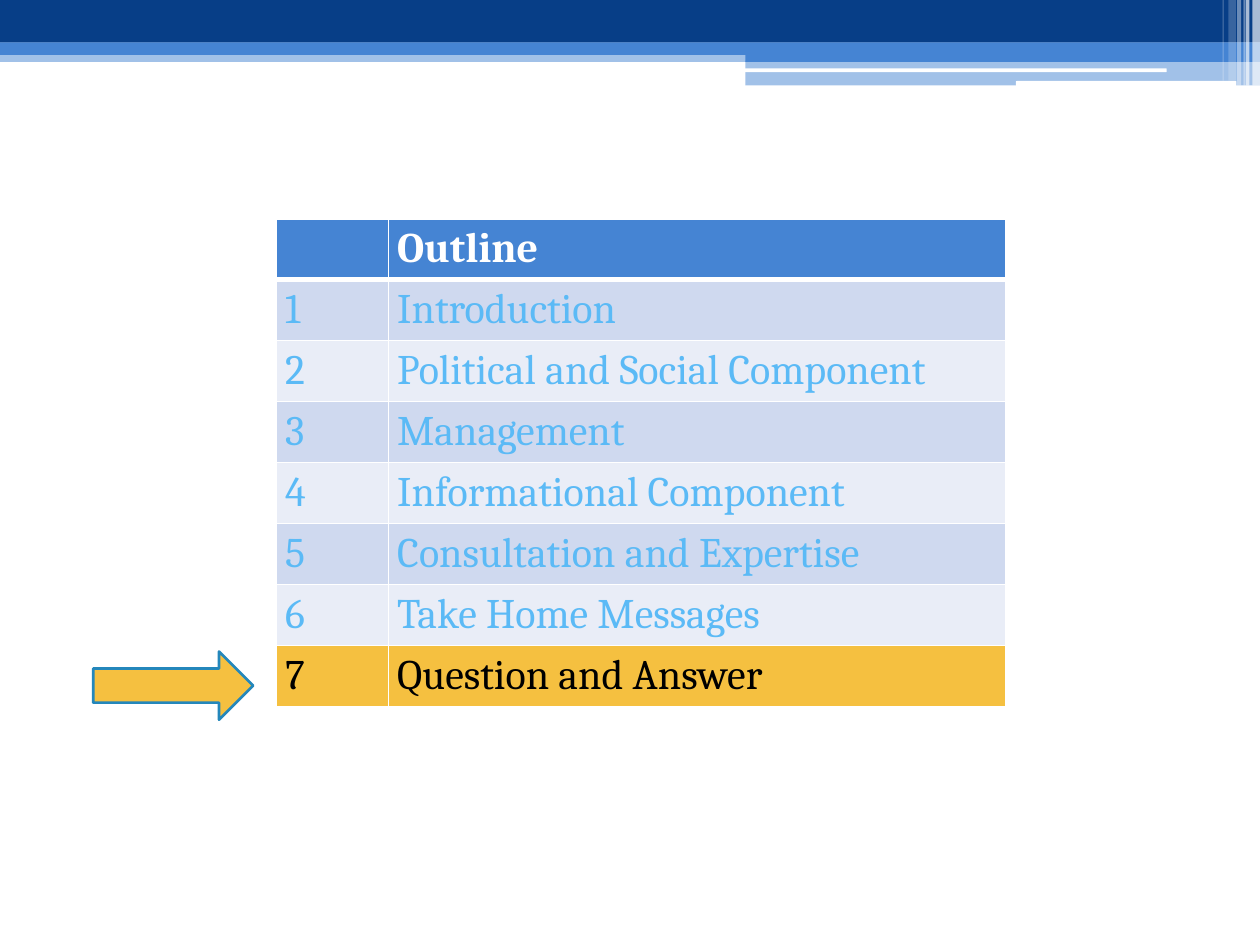
from lxml import etree
from pptx import Presentation
from pptx.dml.color import RGBColor
from pptx.enum.shapes import MSO_SHAPE
from pptx.oxml.ns import qn
from pptx.util import Pt

RECT = MSO_SHAPE.RECTANGLE
ROUND = MSO_SHAPE.ROUNDED_RECTANGLE
ARROW = MSO_SHAPE.RIGHT_ARROW

COLORS = {
    "navy": "073E87", "blue": "4584D3", "white": "FFFFFF", "black": "000000",
    "sky": "5BBAF6", "band_dark": "CFD9EF", "band_light": "E9EDF7",
    "gold": "F5C040", "edge": "2487BB",
}

# Content
HEADING = "Outline"
TOPICS = [
    "Introduction",
    "Political and Social Component",
    "Management",
    "Informational Component",
    "Consultation and Expertise",
    "Take Home Messages",
    "Question and Answer",
]
CURRENT = 7

# Banner parts: shape, left, top, width, height, colour, opacity in percent
BANNER = [
    (RECT, 0, 28.8, 720, 6.6, "blue", 50),
    (RECT, 0, 0, 720, 24.4, "navy", 100),
    (RECT, 0, 24.2, 720, 7.2, "blue", 100),
    (RECT, 426, 28.2, 294, 7.2, "blue", 100),
    (RECT, 426, 34.6, 294, 14.2, "blue", 50),
    (ROUND, 425.5, 39.1, 241.2, 2.16, "white", 100),
    (ROUND, 580.5, 46.3, 126, 2.88, "white", 100),
]
# Stripes at the right end: left, width, height, opacity in percent
STRIPES = [
    (715.7, 4.3, 49, 65),
    (711.8, 2.2, 49, 65),
    (710.6, 0.7, 49, 60),
    (707, 2.2, 49, 40),
    (702, 4.3, 46.1, 20),
    (698.6, 0.7, 46.1, 30),
]

TABLE_LEFT, TABLE_TOP = 158, 125
COLUMN_WIDTHS = [64, 353]
ROW_HEIGHT = 34.8


def color(name):
    return RGBColor.from_string(COLORS[name])


def add_block(page, kind, left, top, width, height, fill, opacity=100, line=None):
    shape = page.shapes.add_shape(kind, Pt(left), Pt(top), Pt(width), Pt(height))
    shape.shadow.inherit = False
    shape.fill.solid()
    shape.fill.fore_color.rgb = color(fill)
    if opacity < 100:
        value = next(shape.fill._xPr.iter(qn("a:srgbClr")))
        etree.SubElement(value, qn("a:alpha"), val=str(opacity * 1000))
    if line:
        shape.line.color.rgb = color(line)
        shape.line.width = Pt(1.5)
    else:
        shape.line.fill.background()
    return shape


def write(frame, text, size=24, ink="sky", bold=False, font="Cambria"):
    para = frame.paragraphs[0]
    para.font.size = Pt(size)
    span = para.add_run()
    span.text = text
    span.font.name = font
    span.font.size = Pt(size)
    span.font.bold = bold
    span.font.color.rgb = color(ink)


def set_borders(cell, top=1, bottom=1):
    properties = cell._tc.get_or_add_tcPr()
    for side, width in (("L", 1), ("R", 1), ("T", top), ("B", bottom)):
        line = etree.SubElement(properties, qn("a:ln" + side), w=str(Pt(width)))
        fill = etree.SubElement(line, qn("a:solidFill"))
        etree.SubElement(fill, qn("a:srgbClr"), val=COLORS["white"])


def row_style(index):
    if index == 0:
        return "blue", "white"
    if index == CURRENT:
        return "gold", "black"
    return ("band_dark" if index % 2 else "band_light"), "sky"


def add_outline(page):
    rows = [("", HEADING)] + [(str(n), topic) for n, topic in enumerate(TOPICS, 1)]
    frame = page.shapes.add_table(
        len(rows), len(COLUMN_WIDTHS), Pt(TABLE_LEFT), Pt(TABLE_TOP),
        Pt(sum(COLUMN_WIDTHS)), Pt(ROW_HEIGHT * len(rows)))
    table = frame.table
    table.first_row = table.horz_banding = False
    for column, width in zip(table.columns, COLUMN_WIDTHS):
        column.width = Pt(width)
    for index, texts in enumerate(rows):
        table.rows[index].height = Pt(ROW_HEIGHT)
        fill, ink = row_style(index)
        for cell, text in zip(table.rows[index].cells, texts):
            cell.margin_left = cell.margin_right = Pt(5)
            cell.margin_top = cell.margin_bottom = Pt(3.6)
            set_borders(cell, top=3 if index == 1 else 1, bottom=3 if index == 0 else 1)
            cell.fill.solid()
            cell.fill.fore_color.rgb = color(fill)
            if text:
                write(cell.text_frame, text, ink=ink, bold=index == 0)


def main():
    deck = Presentation()
    deck.slide_width, deck.slide_height = Pt(720), Pt(540)
    page = deck.slides.add_slide(deck.slide_layouts[6])

    # Banner and its stripes
    for part in BANNER:
        shape = add_block(page, *part)
        if part[0] == ROUND:
            shape.adjustments[0] = 0.17
    for left, width, height, opacity in STRIPES:
        add_block(page, RECT, left, 0, width, height, "white", opacity)

    # Outline table and the arrow to the current topic
    add_outline(page)
    add_block(page, ARROW, 53.3, 372.3, 91.4, 39, "gold", line="edge")

    deck.save("out.pptx")


if __name__ == "__main__":
    main()
